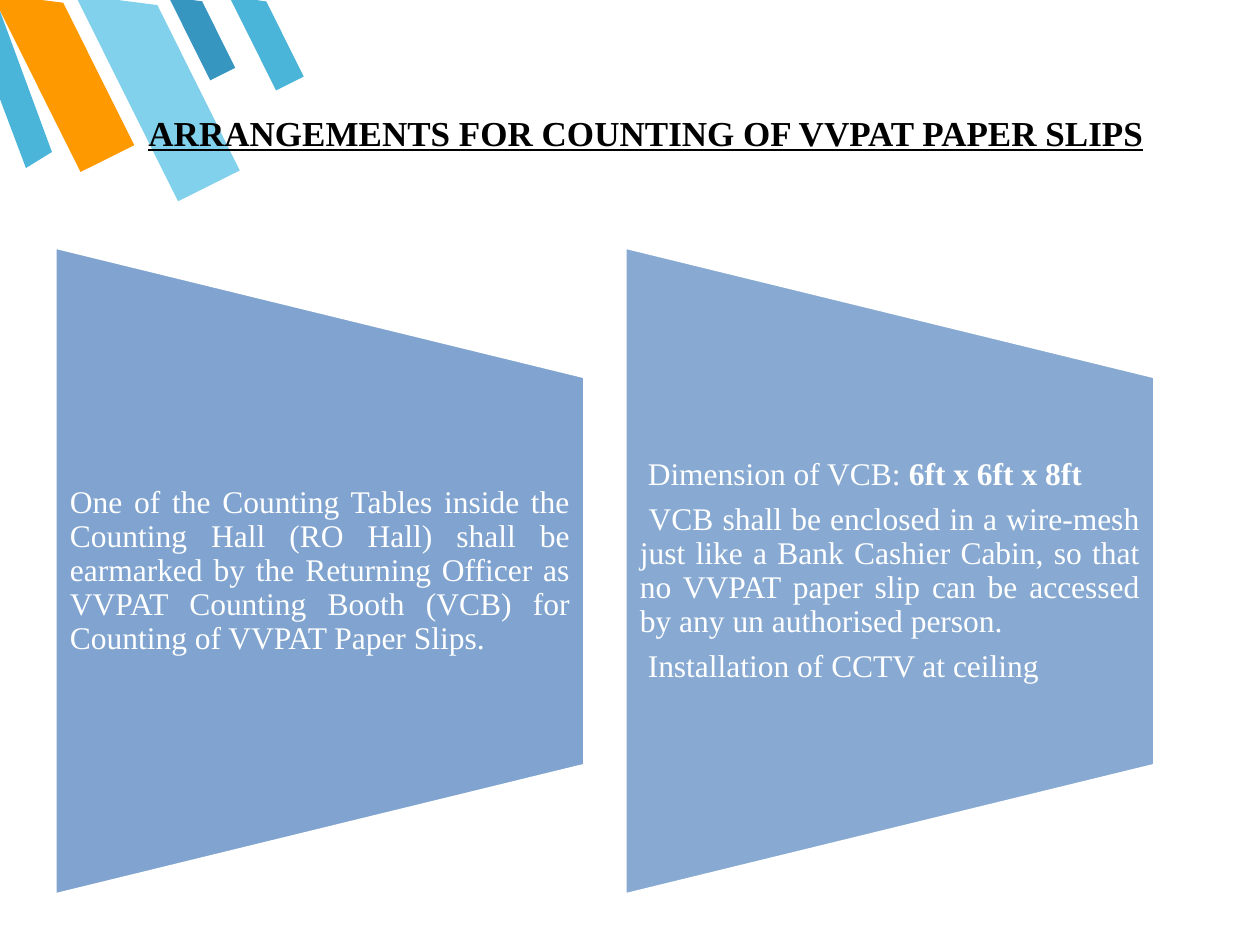
from lxml.etree import SubElement
from pptx import Presentation
from pptx.dml.color import RGBColor
from pptx.enum.shapes import MSO_SHAPE as Shape
from pptx.enum.text import MSO_ANCHOR as Anchor, PP_ALIGN as Align
from pptx.oxml.ns import qn
from pptx.util import Pt

COLORS = {"steel": "3796BF", "orange": "FF9900", "pale": "81D1EC", "cyan": "4BB5D9",
          "panel": "4F81BD", "white": "FFFFFF", "black": "000000"}
FONT = "Times New Roman"
SCALE = 914400 / 126  # EMU per px


def px(*lengths):
    return [round(length * SCALE) for length in lengths]


def paint(shape, color):
    shape.shadow.inherit = False
    shape.fill.solid()
    shape.fill.fore_color.rgb = RGBColor.from_string(COLORS[color])
    shape.line.fill.background()


deck = Presentation()
deck.slide_width, deck.slide_height = px(1260, 945)
page = deck.slides.add_slide(deck.slide_layouts[6])
shapes = page.shapes

# Slanted bars in the top left corner
bars = [(188, -14, 28, 93, "steel"), (33, -30, 60, 199, "orange"),
        (123, -33, 69, 231, "pale"), (251, -16, 31, 105, "cyan")]
for *place, color in bars:
    bar = shapes.add_shape(Shape.FLOWCHART_MANUAL_INPUT, *px(*place))
    bar.element.spPr.get_or_add_xfrm().set("flipH", "1")
    bar.rotation = 333.5
    paint(bar, color)

# Bar cut off by the left edge
outline = shapes.build_freeform(26, 168, scale=SCALE)
outline.add_line_segments([(52, 152), (0, 11), (0, 99)], close=True)
paint(outline.convert_to_shape(), "cyan")

# Title
title = shapes.add_textbox(*px(136, 105, 1104, 55))
title.text_frame.word_wrap = True
para = title.text_frame.paragraphs[0]
para.text = "ARRANGEMENTS FOR COUNTING OF VVPAT PAPER SLIPS"
para.font.name, para.font.size = FONT, Pt(20)
para.font.bold = para.font.underline = True
para.font.color.rgb = RGBColor.from_string(COLORS["black"])

# Two panels: opacity, then paragraphs made of (text, bold) spans
panels = [
    (72, [[("One of the Counting Tables inside the Counting Hall (RO Hall) shall be "
            "earmarked by the Returning Officer as VVPAT Counting Booth (VCB) for "
            "Counting of VVPAT Paper Slips.", False)]]),
    (67, [[(" Dimension of VCB: ", False), ("6ft x 6ft x 8ft", True)],
          [(" VCB shall be enclosed in a wire-mesh just like a Bank Cashier Cabin, "
            "so that no VVPAT paper slip can be accessed by any un authorised person.", False)],
          [(" Installation of CCTV at ceiling", False)]]),
]
PANEL_STEP = 570
for index, (opacity, paragraphs) in enumerate(panels):
    shift = index * PANEL_STEP
    panel = shapes.add_shape(Shape.FLOWCHART_MANUAL_OPERATION, *px(-4 + shift, 306, 648, 530))
    panel.rotation = 270
    paint(panel, "panel")
    panel.line.color.rgb = RGBColor.from_string(COLORS["white"])
    panel.line.width = Pt(2)
    fill_color = panel.element.spPr.find(qn("a:solidFill"))[0]
    SubElement(fill_color, qn("a:alpha")).set("val", str(opacity * 1000))

    box = shapes.add_textbox(*px(55 + shift, 377, 530, 389))
    frame = box.text_frame
    frame.word_wrap = True
    frame.vertical_anchor = Anchor.MIDDLE
    frame.margin_left, frame.margin_right = px(15, 15)
    frame.margin_top = frame.margin_bottom = 0
    for number, spans in enumerate(paragraphs):
        para = frame.add_paragraph() if number else frame.paragraphs[0]
        para.alignment = Align.JUSTIFY
        para.line_spacing = 0.9
        para.space_after = Pt(6.3)
        para.font.name, para.font.size = FONT, Pt(18)
        para.font.color.rgb = RGBColor.from_string(COLORS["white"])
        for text, bold in spans:
            span = para.add_run()
            span.text = text
            span.font.bold = bold

deck.save("out.pptx")
